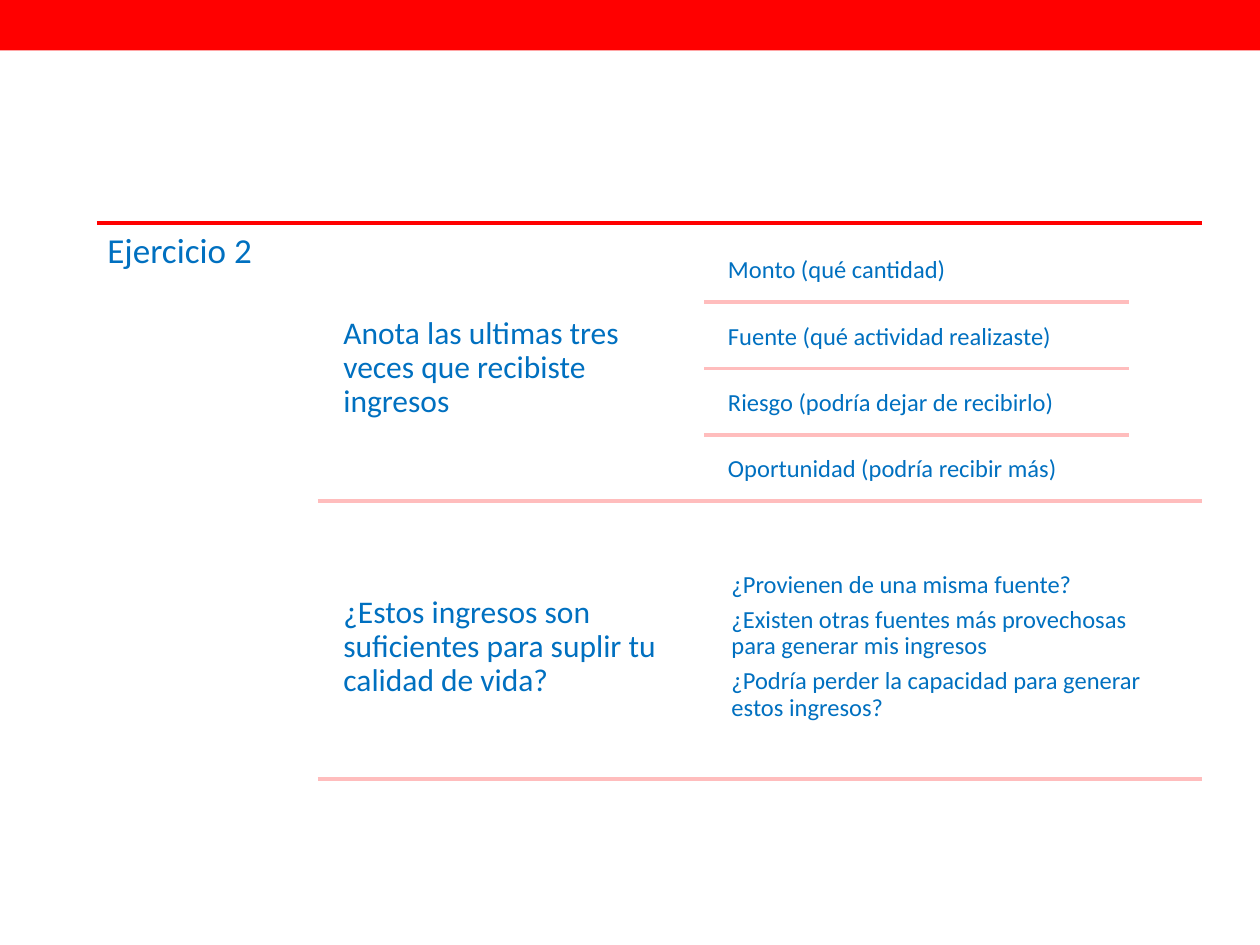
from lxml import etree
from pptx import Presentation
from pptx.dml.color import RGBColor
from pptx.enum.shapes import MSO_CONNECTOR, MSO_SHAPE
from pptx.enum.text import MSO_ANCHOR
from pptx.oxml.ns import qn
from pptx.util import Pt

RED = RGBColor(0xFF, 0x00, 0x00)
PINK = RGBColor(0xFF, 0xBD, 0xBD)
BLUE = RGBColor(0x00, 0x70, 0xC0)

presentation = Presentation()
presentation.slide_width = Pt(720)
presentation.slide_height = Pt(540)
slide = presentation.slides.add_slide(presentation.slide_layouts[6])


def add_rule(left, right, top, color):
    connector = slide.shapes.add_connector(
        MSO_CONNECTOR.STRAIGHT, Pt(left), Pt(top), Pt(right), Pt(top))
    connector.line.color.rgb = color
    connector.line.width = Pt(2.08)
    etree.SubElement(connector.element.spPr, qn("a:effectLst"))


def add_text(box, lines, size, inset, anchor=MSO_ANCHOR.MIDDLE, spacing=0.9):
    shape = slide.shapes.add_textbox(*[Pt(length) for length in box])
    frame = shape.text_frame
    frame_format = {"word_wrap": True, "vertical_anchor": anchor}
    for side in ("left", "top", "right", "bottom"):
        frame_format[f"margin_{side}"] = Pt(inset)
    for name, value in frame_format.items():
        setattr(frame, name, value)

    font_format = {"name": "Calibri", "size": Pt(size)}
    frame.text = "\n".join(lines)
    for paragraph in frame.paragraphs:
        paragraph.line_spacing = spacing
        paragraph.space_after = Pt(round(size * 0.35, 2))
        for name, value in font_format.items():
            setattr(paragraph.runs[0].font, name, value)
        paragraph.runs[0].font.color.rgb = BLUE


# Top band
band = slide.shapes.add_shape(MSO_SHAPE.RECTANGLE, 0, 0, Pt(720), Pt(28.8))
band.shadow.inherit = False
band.fill.solid()
band.fill.fore_color.rgb = RED
band.line.fill.background()

# Heading column
LEFT, RIGHT, TOP = 55.4, 686.6, 127.4
add_rule(LEFT, RIGHT, TOP, RED)
add_text((LEFT, TOP, 126.2, 326), ["Ejercicio 2"], 20, 6, MSO_ANCHOR.TOP)

# Two questions, each closed by a rule
FIRST_TOP, BLOCK_HEIGHT, BLOCK_STEP = 134.9, 151.4, 159
questions = [
    "Anota las ultimas tres veces que recibiste ingresos",
    "¿Estos ingresos son suficientes para suplir tu calidad de vida?",
]
for index, question in enumerate(questions):
    block_top = FIRST_TOP + index * BLOCK_STEP
    add_text((190.8, block_top, 212, BLOCK_HEIGHT), [question], 18, 5.4)
    add_rule(181.6, RIGHT, block_top + BLOCK_HEIGHT, PINK)

# Items of the first question, with rules between them
items = [
    "Monto (qué cantidad)",
    "Fuente (qué actividad realizaste)",
    "Riesgo (podría dejar de recibirlo)",
    "Oportunidad (podría recibir más)",
]
item_height = BLOCK_HEIGHT / len(items)
for index, item in enumerate(items):
    item_top = FIRST_TOP + index * item_height
    add_text((411.8, item_top, 242.8, item_height), [item], 14, 4.2, spacing=1.0)
    if index:
        add_rule(402.4, 645.2, item_top, PINK)

# Follow-up questions
follow_ups = [
    "¿Provienen de una misma fuente?",
    "¿Existen otras fuentes más provechosas para generar mis ingresos",
    "¿Podría perder la capacidad para generar estos ingresos?",
]
add_text((413.8, FIRST_TOP + BLOCK_STEP, 242.8, BLOCK_HEIGHT), follow_ups, 14, 4.2)

presentation.save("out.pptx")
